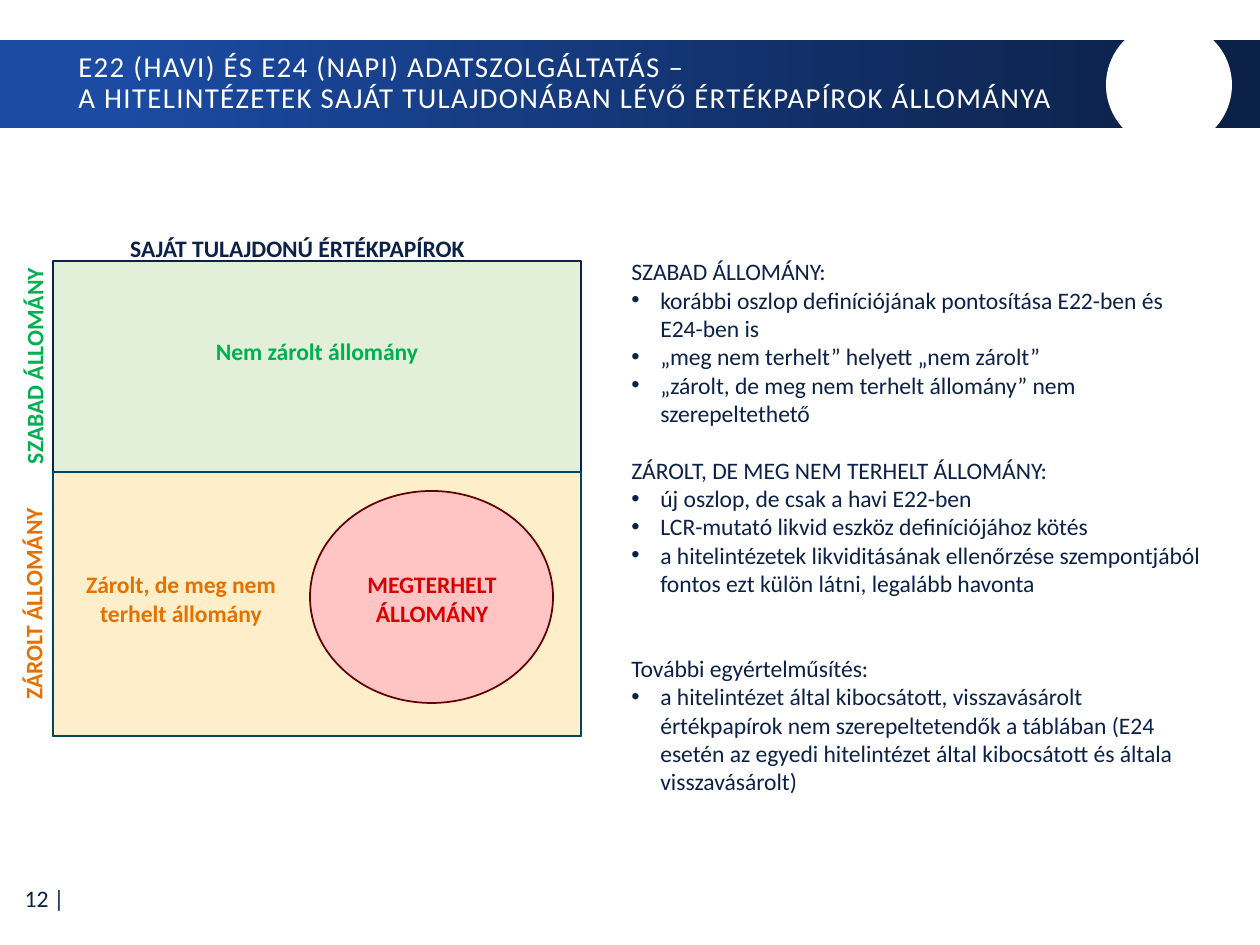
from dataclasses import dataclass

from pptx import Presentation
from pptx.dml.color import RGBColor
from pptx.enum.shapes import MSO_SHAPE
from pptx.enum.text import MSO_ANCHOR, PP_ALIGN
from pptx.oxml.ns import qn
from pptx.util import Pt
from lxml.etree import SubElement

PX = 914400 / 126  # EMU in one px


def emu(*lengths):
    return [round(length * PX) for length in lengths]


@dataclass(frozen=True)
class Theme:
    font: str = "Calibri"
    title_size: float = 16.5
    body_size: float = 13.5
    line_gap: float = 16.25
    navy: str = "0C2148"
    blue: str = "1B4BA3"
    white: str = "FFFFFF"
    free: str = "00B050"
    free_fill: str = "E2F0D9"
    locked: str = "E57200"
    locked_fill: str = "FFEECA"
    locked_line: str = "004562"
    pledged: str = "DA0000"
    pledged_fill: str = "FFC5C5"
    pledged_line: str = "600000"


class SlideBuilder:
    def __init__(self, slide, theme):
        self.slide = slide
        self.theme = theme

    def shape(self, kind, box, fill, line=None):
        shape = self.slide.shapes.add_shape(kind, *emu(*box))
        shape.shadow.inherit = False
        shape.fill.solid()
        shape.fill.fore_color.rgb = RGBColor.from_string(fill)
        if line:
            shape.line.color.rgb = RGBColor.from_string(line)
            shape.line.width = Pt(1)
        else:
            shape.line.fill.background()
        return shape

    def gradient_band(self, box, stops):
        band = self.shape(MSO_SHAPE.RECTANGLE, box, stops[0][1])
        band.fill.gradient()
        band.fill.gradient_angle = 0
        for stop, (position, color) in zip(band.fill.gradient_stops, stops):
            stop.position = position
            stop.color.rgb = RGBColor.from_string(color)

    def text_frame(self, box, anchor=MSO_ANCHOR.TOP, rotation=0):
        text_box = self.slide.shapes.add_textbox(*emu(*box))
        text_box.rotation = rotation
        frame = text_box.text_frame
        frame.word_wrap = True
        frame.vertical_anchor = anchor
        return frame

    def style(self, paragraph, color, size=None, bold=False):
        font = paragraph.font
        font.name = self.theme.font
        font.size = Pt(size or self.theme.body_size)
        font.bold = bold
        font.color.rgb = RGBColor.from_string(color)

    def title(self, box, text):
        paragraph = self.text_frame(box, MSO_ANCHOR.MIDDLE).paragraphs[0]
        paragraph.text = text
        paragraph.line_spacing = 0.9
        self.style(paragraph, self.theme.white, self.theme.title_size)
        for run in paragraph.runs:
            run._r.get_or_add_rPr().set("spc", "80")

    def label(self, box, text, color, rotation=0):
        paragraph = self.text_frame(box, rotation=rotation).paragraphs[0]
        paragraph.text = text
        paragraph.alignment = PP_ALIGN.CENTER
        self.style(paragraph, color, bold=True)

    def page_number(self, box, text):
        paragraph = self.text_frame(box, MSO_ANCHOR.MIDDLE).paragraphs[0]
        paragraph.text = text
        paragraph.alignment = PP_ALIGN.RIGHT
        self.style(paragraph, self.theme.navy)

    def bullet(self, paragraph, indent=29):
        properties = paragraph._p.get_or_add_pPr()
        (indent_emu,) = emu(indent)
        properties.set("marL", str(indent_emu))
        properties.set("indent", str(-indent_emu))
        SubElement(properties, qn("a:buFont")).set("typeface", "Arial")
        SubElement(properties, qn("a:buChar")).set("char", "•")

    def sections(self, box, sections):
        frame = self.text_frame(box)
        paragraph = frame.paragraphs[0]
        for index, (gap_lines, heading, items) in enumerate(sections):
            if index:
                paragraph = frame.add_paragraph()
                paragraph.space_before = Pt(gap_lines * self.theme.line_gap)
            paragraph.text = heading
            self.style(paragraph, self.theme.navy)
            for item in items:
                paragraph = frame.add_paragraph()
                paragraph.text = item
                self.bullet(paragraph)
                self.style(paragraph, self.theme.navy)


SECTIONS = [
    (0, "SZABAD ÁLLOMÁNY:", [
        "korábbi oszlop definíciójának pontosítása E22-ben és E24-ben is",
        "„meg nem terhelt” helyett „nem zárolt”",
        "„zárolt, de meg nem terhelt állomány” nem szerepeltethető",
    ]),
    (1, "ZÁROLT, DE MEG NEM TERHELT ÁLLOMÁNY:", [
        "új oszlop, de csak a havi E22-ben",
        "LCR-mutató likvid eszköz definíciójához kötés",
        "a hitelintézetek likviditásának ellenőrzése szempontjából "
        "fontos ezt külön látni, legalább havonta",
    ]),
    (2, "További egyértelműsítés:", [
        "a hitelintézet által kibocsátott, visszavásárolt értékpapírok nem "
        "szerepeltetendők a táblában (E24 esetén az egyedi hitelintézet által "
        "kibocsátott és általa visszavásárolt)",
    ]),
]


def main():
    presentation = Presentation()
    presentation.slide_width, presentation.slide_height = emu(1260, 945)
    theme = Theme()
    slide = presentation.slides.add_slide(presentation.slide_layouts[6])
    builder = SlideBuilder(slide, theme)

    # Header band, page number and title
    builder.page_number((1, 875, 76, 46), "12 |")
    builder.gradient_band((0, 40, 1260, 88), [(0.09, theme.blue), (0.95, theme.navy)])
    builder.shape(MSO_SHAPE.OVAL, (1106, 22, 126, 126), theme.white)
    builder.title(
        (66, 42, 1048, 84),
        "E22 (HAVI) ÉS E24 (NAPI) ADATSZOLGÁLTATÁS –\v"
        "A HITELINTÉZETEK SAJÁT TULAJDONÁBAN LÉVŐ ÉRTÉKPAPÍROK ÁLLOMÁNYA",
    )

    # Set diagram: all securities, locked part, pledged part
    builder.shape(MSO_SHAPE.RECTANGLE, (53, 261, 528, 475), theme.free_fill, theme.navy)
    builder.shape(MSO_SHAPE.RECTANGLE, (53, 472, 528, 264),
                  theme.locked_fill, theme.locked_line)
    builder.shape(MSO_SHAPE.OVAL, (310, 491, 243, 212),
                  theme.pledged_fill, theme.pledged_line)

    # Diagram labels
    builder.label((77, 228, 441, 42), "SAJÁT TULAJDONÚ ÉRTÉKPAPÍROK", theme.navy)
    builder.label((-80, 345, 229, 42), "SZABAD ÁLLOMÁNY", theme.free, 270)
    builder.label((-98, 583, 263, 42), "ZÁROLT ÁLLOMÁNY", theme.locked, 270)
    builder.label((201, 331, 232, 42), "Nem zárolt állomány", theme.free)
    builder.label((65, 564, 232, 70), "Zárolt, de meg nem terhelt állomány", theme.locked)
    builder.label((316, 564, 232, 70), "MEGTERHELT ÁLLOMÁNY", theme.pledged)

    # Explanations
    builder.sections((619, 251, 602, 557), SECTIONS)

    presentation.save("out.pptx")


if __name__ == "__main__":
    main()
